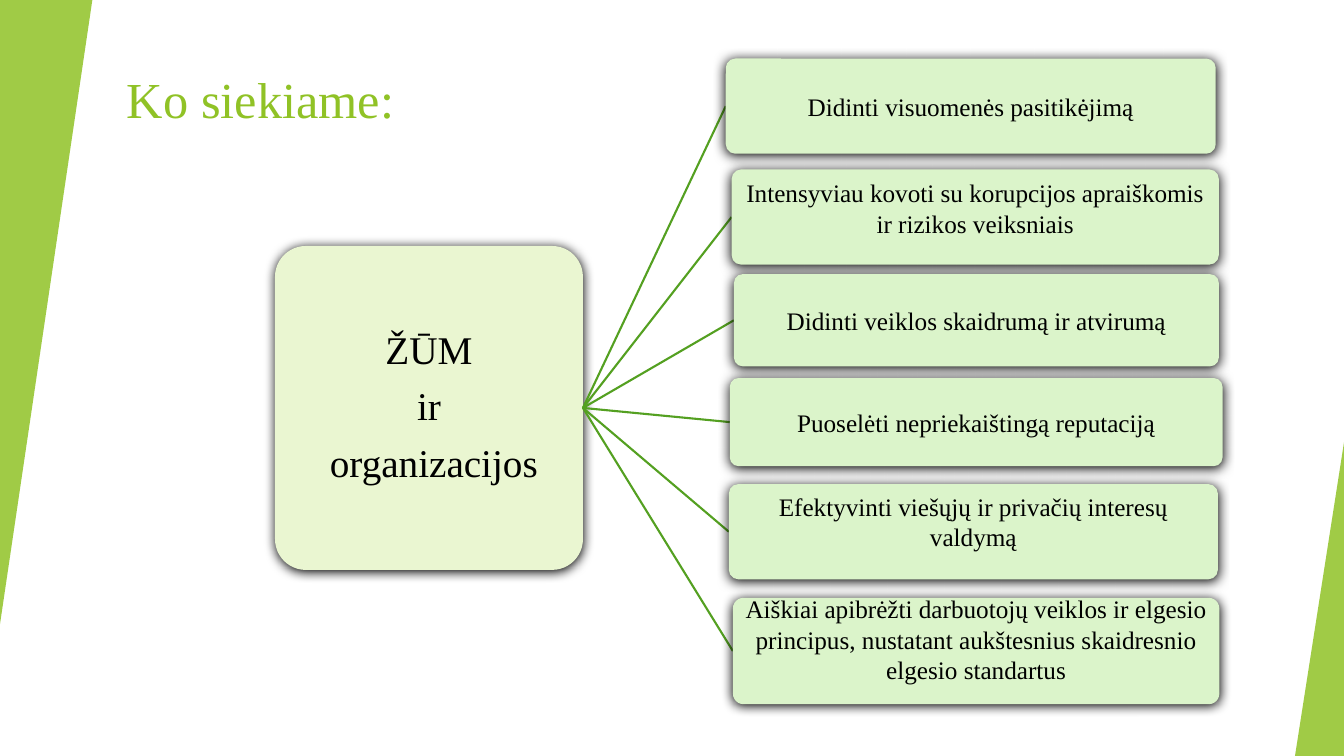
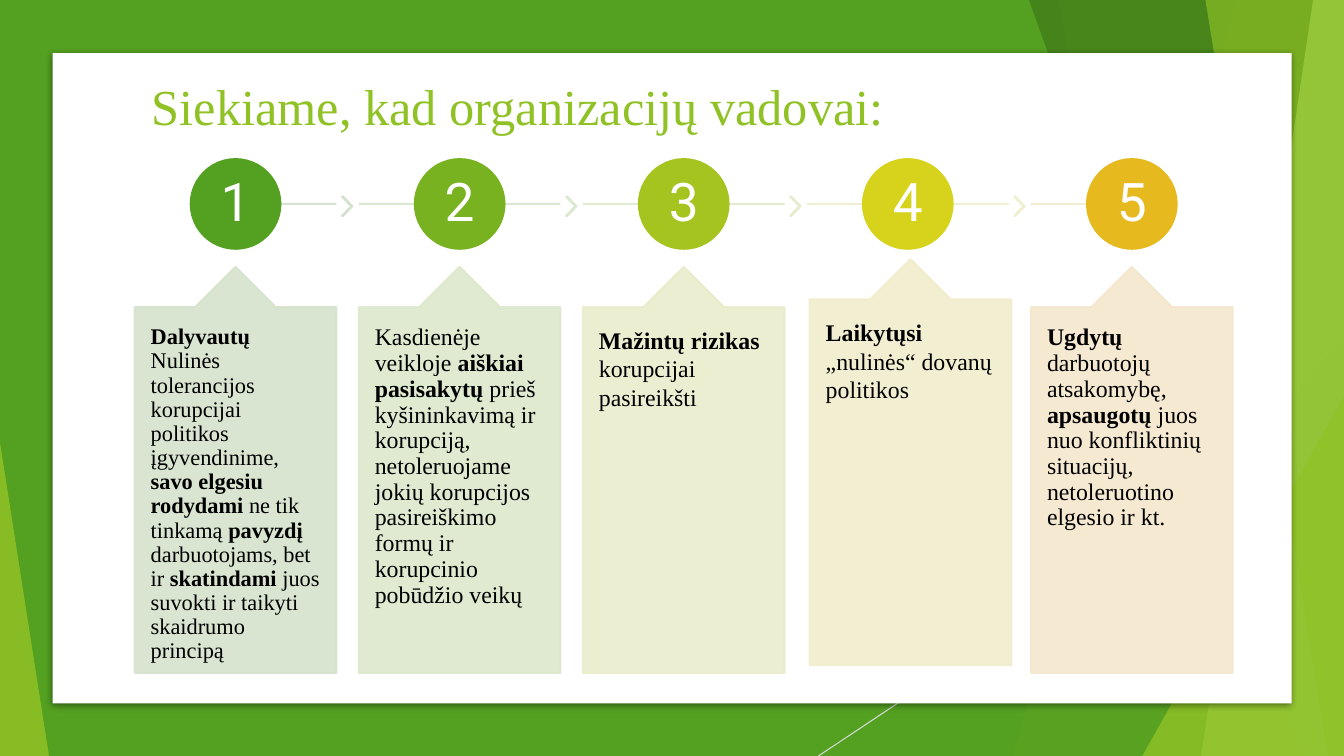
from lxml.etree import SubElement
from pptx import Presentation
from pptx.dml.color import RGBColor
from pptx.enum.shapes import MSO_CONNECTOR, MSO_SHAPE as Geometry
from pptx.enum.text import MSO_ANCHOR as Anchor, PP_ALIGN as Align
from pptx.oxml.ns import qn
from pptx.util import Pt

WIDTH, HEIGHT = 960, 540
SERIF, SANS = "Times New Roman", "Roboto"
LIME, GREEN, DARK_GREEN, PALE_LIME = "90C226", "54A021", "3F7819", "C0E474"
WHITE, BLACK, GREY = "FFFFFF", "000000", "D9D9D9"
HUB_FILL, GOAL_FILL = "EAF6D1", "DBF4CA"

# Corner points, colour, opacity in percent
SIDE_FACETS = [
    ([(0, 0), (66, 0), (0, 446)], LIME, 85),
    ([(960, 316), (960, 540), (925, 540)], LIME, 85),
]
FRAME_FACETS = [
    ([(884, 0), (960, 0), (960, 540), (723, 540)], LIME, 30),
    ([(756, 0), (960, 0), (960, 540), (852, 540)], LIME, 20),
    ([(960, 240), (960, 540), (703, 540)], GREEN, 72),
    ([(735, 0), (960, 0), (960, 540), (930, 540)], DARK_GREEN, 70),
    ([(938, 0), (960, 0), (960, 540), (858, 540)], PALE_LIME, 70),
    ([(861, 0), (960, 0), (960, 540), (949, 540)], LIME, 65),
    ([(960, 283), (960, 540), (816, 540)], LIME, 80),
    ([(0, 316), (35, 540), (0, 540)], LIME, 85),
]

# Text, left, top, width, height, bottom inset
GOALS = [
    ("Didinti visuomenės pasitikėjimą", 518.4, 41.8, 350, 68, 1),
    ("Intensyviau kovoti su korupcijos apraiškomis ir rizikos veiksniais",
     522.6, 121, 348, 68, 14),
    ("Didinti veiklos skaidrumą ir atvirumą", 524.2, 195.8, 346.5, 66, 1),
    ("Puoselėti nepriekaištingą reputaciją", 521.3, 270, 352, 63, 1),
    ("Efektyvinti viešųjų ir privačių interesų valdymą", 520.6, 345.8, 349.3, 68, 16),
    ("Aiškiai apibrėžti darbuotojų veiklos ir elgesio principus, "
     "nustatant aukštesnius skaidresnio elgesio standartus", 523.5, 427, 347.5, 76, 18),
]

# Circle, callout, line and chevron colours, size, line spacing,
# callout shift and runs of text with their weight
STEPS = [
    (GREEN, "D5E3CC", "D1DFCD", "D3E1CC", 16, 0.9, (0, 0), [
        ("Dalyvautų ", True),
        ("Nulinės tolerancijos korupcijai politikos įgyvendinime, ", False),
        ("savo elgesiu rodydami ", True), ("ne tik tinkamą ", False),
        ("pavyzdį ", True), ("darbuotojams, bet ir ", False),
        ("skatindami ", True),
        ("juos suvokti ir taikyti skaidrumo principą", False)]),
    ("79B220", "DDE8CC", "D7E5CC", "DAE7CC", 17, 0.9, (0, 0), [
        ("Kasdienėje veikloje ", False), ("aiškiai pasisakytų ", True),
        ("prieš kyšininkavimą ir korupciją, netoleruojame jokių korupcijos "
         "pasireiškimo formų ir korupcinio pobūdžio veikų", False)]),
    ("A5C41F", "E9EDCB", "E1EACB", "E5ECCB", 17, 1, (0, 0), [
        ("Mažintų rizikas ", True), ("korupcijai pasireikšti", False)]),
    ("D7D31D", "F1EDCC", "EDEFCC", "F0EFCC", 17, 1, (2, -5.5), [
        ("Laikytųsi ", True), ("„nulinės“ dovanų politikos", False)]),
    ("E6B91E", "F5E7CD", "F3EBCC", None, 17, 0.9, (0, 0), [
        ("Ugdytų ", True), ("darbuotojų atsakomybę, ", False),
        ("apsaugotų", True),
        (" juos nuo konfliktinių situacijų, netoleruotino elgesio ir kt.", False)]),
]


def rgb(value):
    return RGBColor.from_string(value)


def set_opacity(shape, percent):
    """Apply one opacity to the fill and line of a shape."""
    for colour in shape.element.spPr.iter(qn("a:srgbClr")):
        SubElement(colour, qn("a:alpha"), val=str(percent * 1000))


def paint(shape, fill, outline=None):
    shape.shadow.inherit = False
    shape.fill.solid()
    shape.fill.fore_color.rgb = rgb(fill)
    if outline:
        shape.line.color.rgb = rgb(outline)
        shape.line.width = Pt(1.5)
    else:
        shape.line.fill.background()


def add_box(slide, geometry, left, top, width, height, fill, outline=None, adjust=()):
    box = slide.shapes.add_shape(geometry, Pt(left), Pt(top), Pt(width), Pt(height))
    for index, value in enumerate(adjust):
        box.adjustments[index] = value
    paint(box, fill, outline)
    return box


def cast_shadow(shape, blur, distance, percent):
    effects = shape.element.spPr.find(qn("a:effectLst"))
    shadow = SubElement(effects, qn("a:outerShdw"), blurRad=str(Pt(blur)),
                        dist=str(Pt(distance)), dir="5400000", rotWithShape="0")
    colour = SubElement(shadow, qn("a:srgbClr"), val=BLACK)
    SubElement(colour, qn("a:alpha"), val=str(percent * 1000))


def add_facets(slide, facets):
    for corners, fill, opacity in facets:
        points = [(Pt(x), Pt(y)) for x, y in corners]
        builder = slide.shapes.build_freeform(*points[0])
        builder.add_line_segments(points[1:], close=True)
        facet = builder.convert_to_shape()
        paint(facet, fill)
        set_opacity(facet, opacity)


def add_line(slide, start, end, colour, width=1.5):
    line = slide.shapes.add_connector(
        MSO_CONNECTOR.STRAIGHT, *(Pt(value) for value in (*start, *end)))
    line.line.color.rgb = rgb(colour)
    line.line.width = Pt(width)
    SubElement(line.element.spPr, qn("a:effectLst"))
    return line


def set_frame(shape, anchor, insets):
    """Insets are left, top, right, bottom."""
    frame = shape.text_frame
    frame.word_wrap = True
    frame.vertical_anchor = anchor
    (frame.margin_left, frame.margin_top,
     frame.margin_right, frame.margin_bottom) = map(Pt, insets)
    return frame


def write(paragraph, runs, size, colour=BLACK, font=SERIF, align=Align.CENTER, spacing=1):
    paragraph.alignment = align
    paragraph.line_spacing = spacing
    for text, bold in runs:
        run = paragraph.add_run()
        run.text = text
        run.font.name = font
        run.font.size = Pt(size)
        run.font.bold = bold
        run.font.color.rgb = rgb(colour)


def add_title(slide, text, left, top, width, height):
    title = slide.shapes.title
    title.left, title.top, title.width, title.height = map(Pt, (left, top, width, height))
    frame = set_frame(title, Anchor.MIDDLE, (7.2, 3.6, 7.2, 3.6))
    write(frame.paragraphs[0], [(text, False)], 36, LIME, align=Align.LEFT)


def build_goals(slide):
    add_facets(slide, SIDE_FACETS)
    add_title(slide, "Ko siekiame:", 83.5, 42, 280, 57)

    hub_left, hub_top, hub_width, hub_height = 196.4, 175.7, 220, 231.4
    hub = add_box(slide, Geometry.ROUNDED_RECTANGLE, hub_left, hub_top,
                  hub_width, hub_height, HUB_FILL, adjust=[0.1])
    cast_shadow(hub, 8.5, 1, 100)
    frame = set_frame(hub, Anchor.MIDDLE, (1.5, 1.5, 1.5, 1.5))
    for index, text in enumerate(["ŽŪM", "ir", " organizacijos"]):
        paragraph = frame.add_paragraph() if index else frame.paragraphs[0]
        write(paragraph, [(text, False)], 28, spacing=0.9)
        paragraph.space_after = Pt(10)

    origin = (hub_left + hub_width, hub_top + hub_height / 2)
    for text, left, top, width, height, bottom in GOALS:
        add_line(slide, origin, (left, top + height / 2), GREEN)
        goal = add_box(slide, Geometry.ROUNDED_RECTANGLE, left, top, width, height,
                       GOAL_FILL, adjust=[0.1])
        cast_shadow(goal, 8.5, 1, 100)
        frame = set_frame(goal, Anchor.MIDDLE, (1, 1, 1, bottom))
        write(frame.paragraphs[0], [(text, False)], 18)


def add_step(slide, number, step):
    circle_fill, callout_fill, line_colour, chevron_fill, size, spacing, shift, runs = step
    width, diameter, axis = 144, 64, 145.7
    left = 96.3 + 160.05 * (number - 1)
    middle = left + width / 2

    line_start = middle if number == 1 else left
    line_end = middle if number == len(STEPS) else left + width
    set_opacity(add_line(slide, (line_start, axis), (line_end, axis), line_colour), 90)
    if chevron_fill:
        chevron = add_box(slide, Geometry.CHEVRON, left + 148, 140.4, 7.4, 13.8,
                          chevron_fill, chevron_fill, [0.9])
        set_opacity(chevron, 90)

    circle = add_box(slide, Geometry.OVAL, middle - diameter / 2, axis - diameter / 2,
                     diameter, diameter, circle_fill, circle_fill)
    frame = set_frame(circle, Anchor.MIDDLE, (2, 2, 2, 2))
    write(frame.paragraphs[0], [(str(number), False)], 38, WHITE, SANS, spacing=0.9)

    callout = add_box(slide, Geometry.UP_ARROW_CALLOUT, left + shift[0], 190.6 + shift[1],
                      width, 290, callout_fill, callout_fill, [0.5, 0.2, 0.2, 1])
    set_opacity(callout, 90)
    frame = set_frame(callout, Anchor.TOP, (11.4, 13, 11.4, 13))
    write(frame.paragraphs[0], runs, size, align=Align.LEFT, spacing=spacing)


def build_steps(slide):
    slide.background.fill.solid()
    slide.background.fill.fore_color.rgb = rgb(GREEN)
    add_line(slide, (WIDTH, 290), (584.6, HEIGHT), GREY, 0.75)
    add_facets(slide, FRAME_FACETS)
    panel = add_box(slide, Geometry.RECTANGLE, 37.6, 38, 885, 464.4, WHITE)
    cast_shadow(panel, 5, 1.4, 43)
    add_title(slide, "Siekiame, kad organizacijų vadovai:", 101.3, 48, 803, 54)
    # The title placeholder comes first, so it is lifted above the panel.
    panel.element.addnext(slide.shapes.title.element)
    for number, step in enumerate(STEPS, start=1):
        add_step(slide, number, step)


def main():
    deck = Presentation()
    deck.slide_width, deck.slide_height = Pt(WIDTH), Pt(HEIGHT)
    title_only = deck.slide_layouts[5]
    for build in (build_goals, build_steps):
        build(deck.slides.add_slide(title_only))
    deck.save("out.pptx")


if __name__ == "__main__":
    main()
